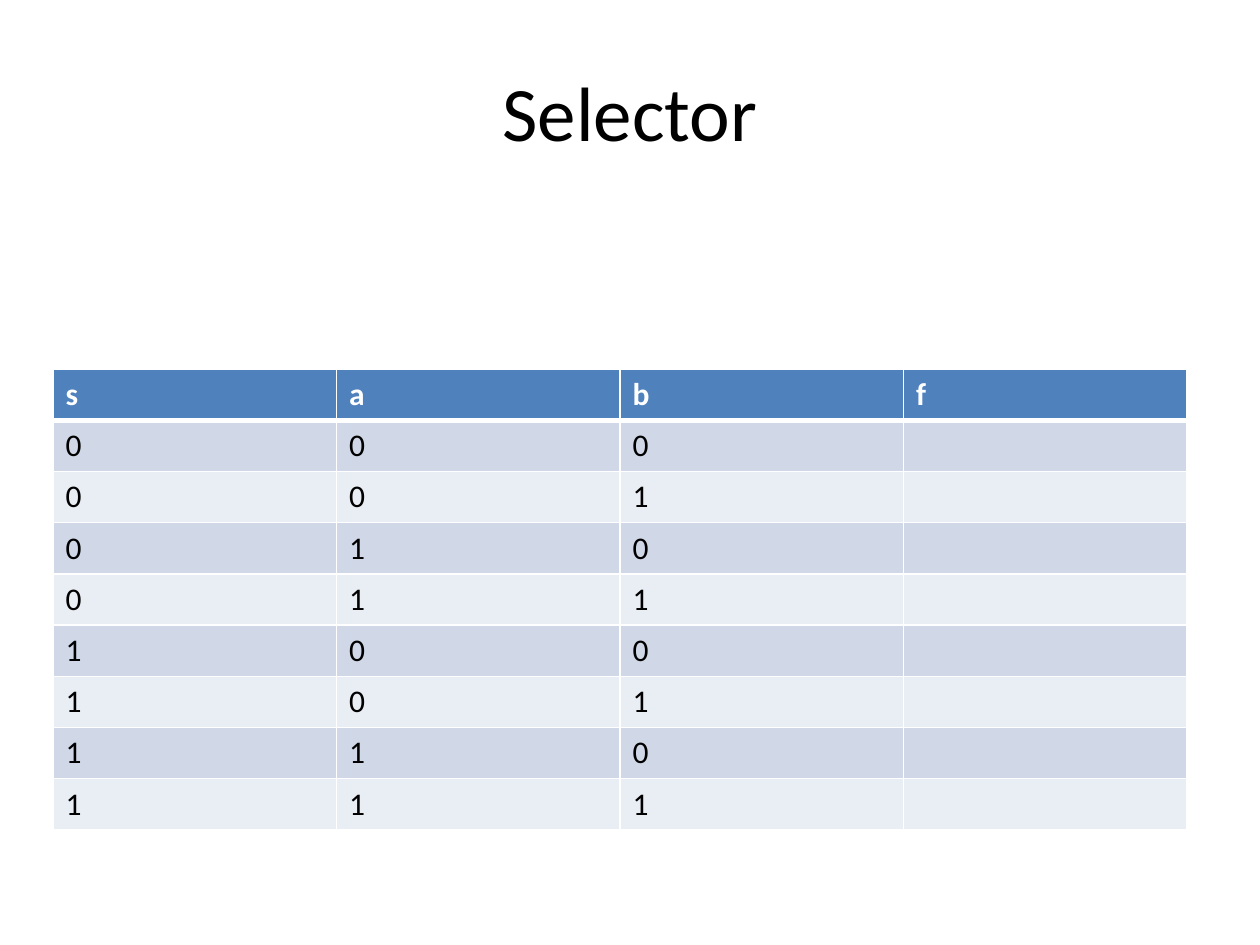
from dataclasses import dataclass
from itertools import product

from lxml.etree import SubElement
from pptx import Presentation
from pptx.dml.color import RGBColor
from pptx.enum.text import MSO_ANCHOR as Anchor, PP_ALIGN as Align
from pptx.oxml.ns import qn
from pptx.util import Inches, Pt


@dataclass(frozen=True)
class Theme:
    font: str = "Calibri"
    title_size: int = 44
    table_size: int = 18
    text: str = "000000"
    header_text: str = "FFFFFF"
    header_fill: str = "4F81BD"
    bands: tuple = ("D0D8E8", "E9EDF4")
    rule: str = "FFFFFF"
    thin: int = 1
    thick: int = 3


def write_text(frame, text, *, font, size, color, bold=False, align=Align.LEFT):
    paragraph = frame.paragraphs[0]
    paragraph.alignment = align
    run = paragraph.add_run()
    run.text = text
    run.font.name = font
    run.font.size = Pt(size)
    run.font.bold = bold
    run.font.color.rgb = RGBColor.from_string(color)


def draw_borders(cell, color, **widths):
    """Add cell borders; widths are points keyed by side, in the order L, R, T, B.

    Call before filling the cell, as the schema puts lines ahead of the fill.
    """
    properties = cell._tc.get_or_add_tcPr()
    for side, width in widths.items():
        line = SubElement(properties, qn(f"a:ln{side}"), w=str(Pt(width)))
        fill = SubElement(line, qn("a:solidFill"))
        SubElement(fill, qn("a:srgbClr"), val=color)


class SlideBuilder:
    def __init__(self, slide, theme):
        self.slide = slide
        self.theme = theme

    def title(self, text, left, top, width, height):
        heading = self.slide.shapes.title
        heading.left, heading.top = Inches(left), Inches(top)
        heading.width, heading.height = Inches(width), Inches(height)
        heading.text_frame.vertical_anchor = Anchor.MIDDLE
        write_text(heading.text_frame, text, font=self.theme.font,
                   size=self.theme.title_size, color=self.theme.text,
                   align=Align.CENTER)

    def table(self, header, body, left, top, width, height):
        rows = [header, *body]
        grid = self.slide.shapes.add_table(
            len(rows), len(header), Inches(left), Inches(top),
            Inches(width), Inches(height)).table
        for row, values in enumerate(rows):
            for column, value in enumerate(values):
                self.table_cell(grid.cell(row, column), row, value)

    def table_cell(self, cell, row, value):
        theme = self.theme
        is_header = row == 0
        draw_borders(cell, theme.rule, L=theme.thin, R=theme.thin,
                     T=theme.thick if row == 1 else theme.thin,
                     B=theme.thick if is_header else theme.thin)
        fill = theme.header_fill if is_header else theme.bands[(row - 1) % 2]
        cell.fill.solid()
        cell.fill.fore_color.rgb = RGBColor.from_string(fill)
        if value:
            write_text(cell.text_frame, value, font=theme.font,
                       size=theme.table_size, bold=is_header,
                       color=theme.header_text if is_header else theme.text)


def main():
    deck = Presentation()
    deck.slide_width, deck.slide_height = Inches(10), Inches(7.5)
    title_only = deck.slide_layouts[5]
    builder = SlideBuilder(deck.slides.add_slide(title_only), Theme())

    builder.title("Selector", 0.5, 0.25, 9, 1.25)
    input_rows = [(*inputs, "") for inputs in product("01", repeat=3)]
    builder.table("sabf", input_rows, 0.42, 2.93, 9, 3.66)

    deck.save("out.pptx")


if __name__ == "__main__":
    main()
